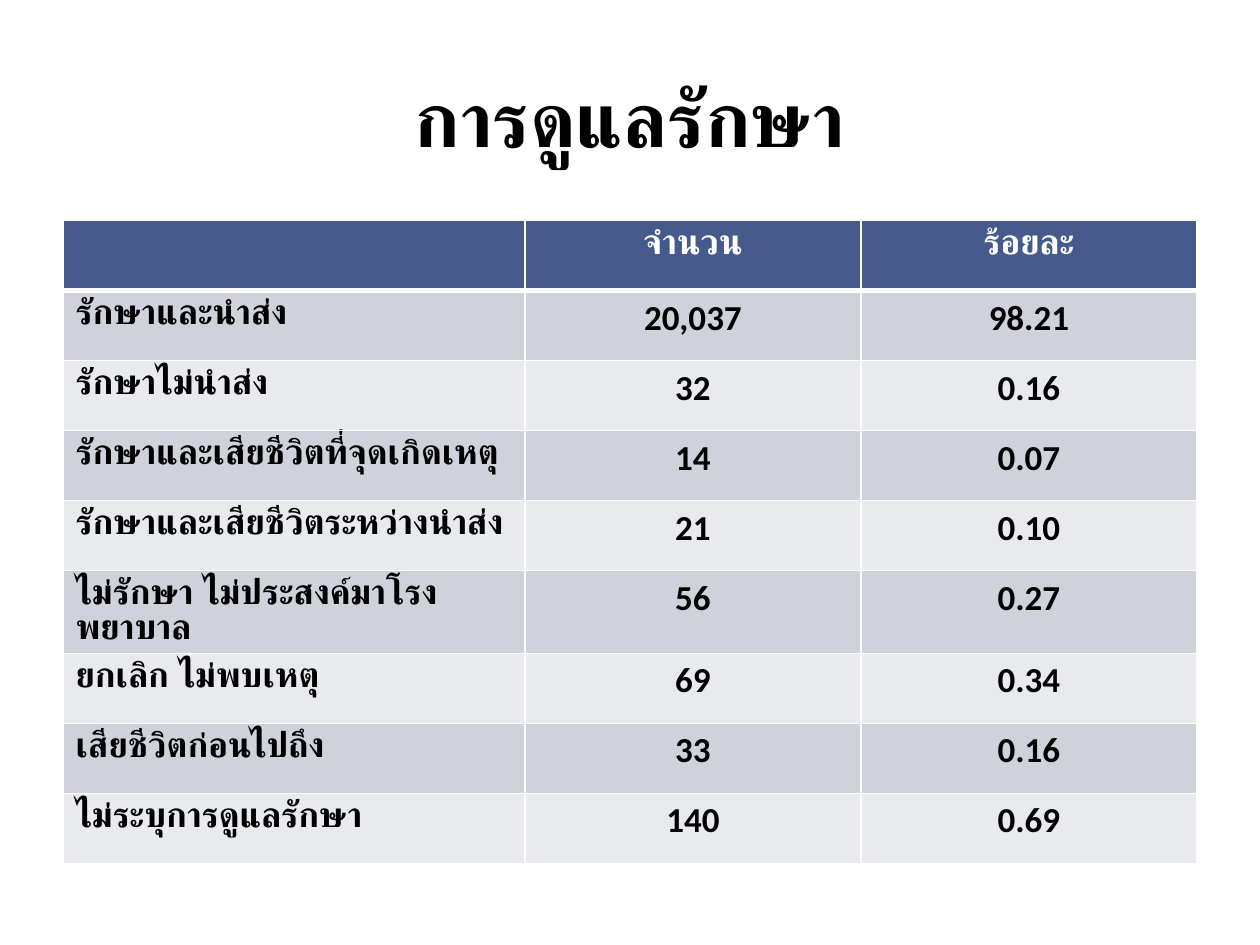
from pptx import Presentation, util as u
from pptx.dml.color import RGBColor
from pptx.enum import text
from pptx.oxml import parse_xml
from pptx.oxml.ns import nsdecls

COLORS = {"header": "475A8D", "odd": "CFD2DB", "even": "E9EAEE",
          "white": "FFFFFF", "black": "000000"}
FONT = "Calibri"
ROWS = [
    ("", "จำนวน", "ร้อยละ"),
    ("รักษาและนำส่ง", "20,037", "98.21"),
    ("รักษาไม่นำส่ง", "32", "0.16"),
    ("รักษาและเสียชีวิตที่จุดเกิดเหตุ", "14", "0.07"),
    ("รักษาและเสียชีวิตระหว่างนำส่ง", "21", "0.10"),
    ("ไม่รักษา ไม่ประสงค์มาโรงพยาบาล", "56", "0.27"),
    ("ยกเลิก ไม่พบเหตุ", "69", "0.34"),
    ("เสียชีวิตก่อนไปถึง", "33", "0.16"),
    ("ไม่ระบุการดูแลรักษา", "140", "0.69"),
]
COL_SHARES = (11 / 27, 8 / 27, 8 / 27)


def style(p, size, color, align):
    p.alignment = align
    p.font.name = FONT
    p.font.size = u.Pt(size)
    p.font.bold = True
    p.font.color.rgb = RGBColor.from_string(COLORS[color])


def add_border(cell, side, width):
    """Draw a white line of the given points on side L, R, T or B."""
    cell._tc.get_or_add_tcPr().append(parse_xml(
        f'<a:ln{side} {nsdecls("a")} w="{u.Pt(width)}"><a:solidFill>'
        f'<a:srgbClr val="{COLORS["white"]}"/></a:solidFill></a:ln{side}>'))


prs = Presentation()
prs.slide_width, prs.slide_height = u.Inches(10), u.Inches(7.5)
W, H = prs.slide_width, prs.slide_height
s = prs.slides.add_slide(prs.slide_layouts[5])
margin, content_w = int(W * 0.05), int(W * 0.9)

title = s.shapes.title
title.left, title.top = margin, int(H * 0.04)
title.width, title.height = content_w, int(H / 6)
tf = title.text_frame
tf.text = "การดูแลรักษา"
tf.vertical_anchor = text.MSO_ANCHOR.MIDDLE
style(tf.paragraphs[0], 44, "black", text.PP_ALIGN.CENTER)

table = s.shapes.add_table(len(ROWS), len(COL_SHARES), margin, u.Inches(1.75),
                           content_w, u.Inches(5)).table
for column, share in zip(table.columns, COL_SHARES):
    column.width = int(content_w * share)

for i, row in enumerate(ROWS):
    fill = "header" if i == 0 else "odd" if i % 2 else "even"
    for j, value in enumerate(row):
        cell = table.cell(i, j)
        cell.text = value
        align = text.PP_ALIGN.CENTER if j else text.PP_ALIGN.LEFT
        style(cell.text_frame.paragraphs[0], 20, "black" if i else "white", align)
        for side in "LRTB":
            thick = (i == 0 and side == "B") or (i == 1 and side == "T")
            add_border(cell, side, 3 if thick else 1)
        cell.fill.solid()
        cell.fill.fore_color.rgb = RGBColor.from_string(COLORS[fill])

prs.save("out.pptx")
